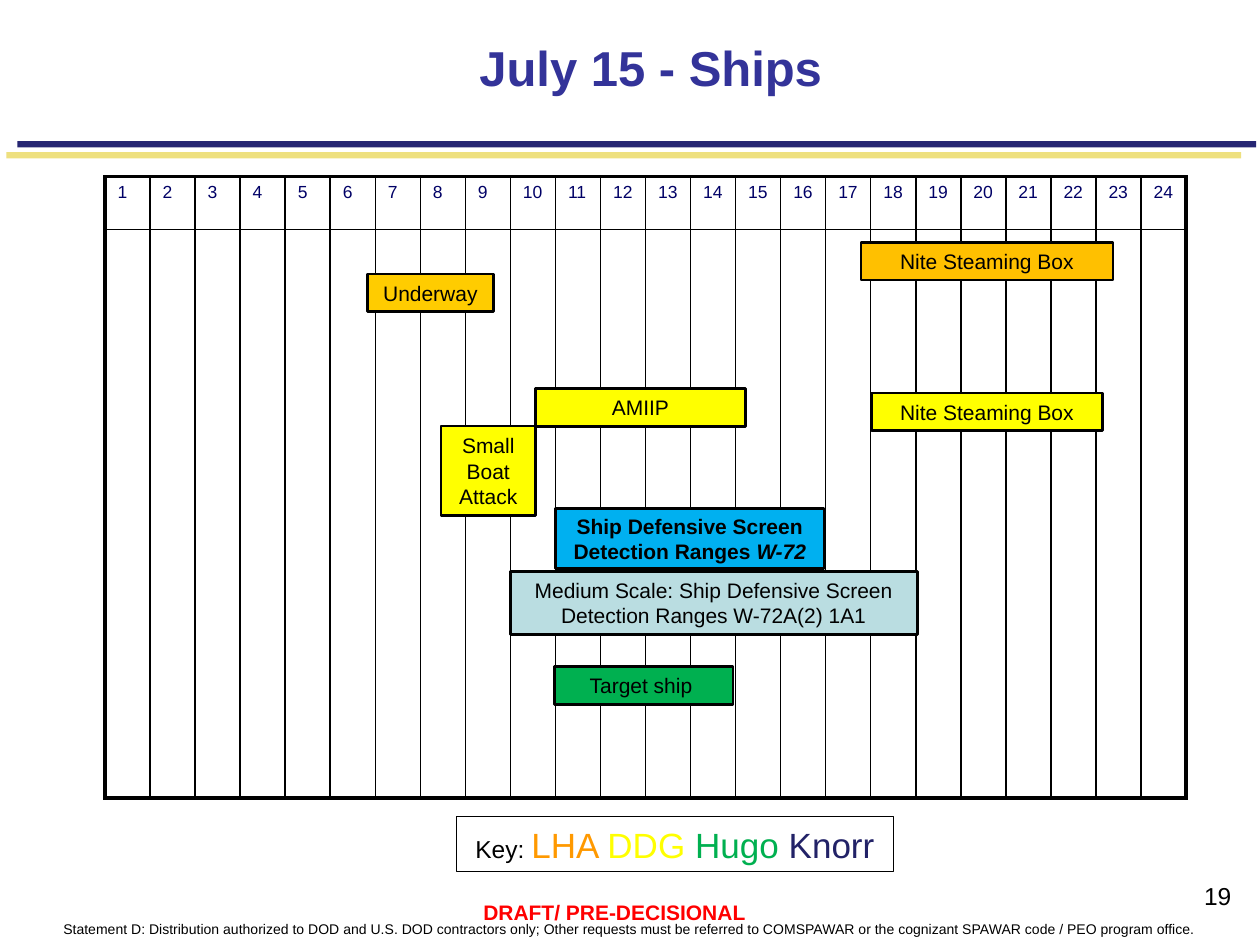
from lxml.etree import SubElement
from pptx import Presentation
from pptx.dml.color import RGBColor
from pptx.enum.shapes import MSO_SHAPE as Shape
from pptx.enum.text import MSO_ANCHOR as Anchor, PP_ALIGN as Align
from pptx.oxml.ns import qn
from pptx.util import Pt

BLACK = RGBColor(0, 0, 0)
WHITE = RGBColor(255, 255, 255)
RED = RGBColor(255, 0, 0)
TITLE_BLUE = RGBColor(0x33, 0x33, 0x99)
RULE_NAVY = RGBColor(0x26, 0x26, 0x73)
RULE_GOLD = RGBColor(0xEE, 0xE0, 0x7F)
HOUR_BLUE = RGBColor(0, 0, 0x66)
ORANGE = RGBColor(0xFF, 0x99, 0)
AMBER = RGBColor(0xFF, 0xC0, 0)
GOLD = RGBColor(0xFF, 0xCC, 0)
YELLOW = RGBColor(0xFF, 0xFF, 0)
GREEN = RGBColor(0, 0xB0, 0x50)
SKY = RGBColor(0, 0xB0, 0xF0)
PALE_TEAL = RGBColor(0xBA, 0xDD, 0xE1)
KNORR_NAVY = RGBColor(0x22, 0x22, 0x67)

HOURS = 24
THIN, THICK = 1, 2.25
STATEMENT = (
    "Statement D: Distribution authorized to DOD and U.S. DOD contractors only; "
    "Other requests must be referred to COMSPAWAR or the cognizant SPAWAR code / "
    "PEO program office."
)
KEY = [("LHA ", ORANGE), ("DDG", YELLOW), (" Hugo ", GREEN), ("Knorr", KNORR_NAVY)]
EVENTS = [
    ("Underway", GOLD, 150, 55.5, 72, 21.6),
    ("Small Boat Attack", YELLOW, 192, 142.5, 54, 51),
    ("Nite Steaming Box", AMBER, 432, 37.5, 144, 21.6),
    ("Nite Steaming Box", YELLOW, 438, 123.5, 132, 21.6),
    ("AMIIP", YELLOW, 246, 121, 120, 21.6),
    ("Target ship ", GREEN, 257, 280, 102, 21.6),
    ("Medium Scale: Ship Defensive Screen Detection Ranges W-72A(2) 1A1",
     PALE_TEAL, 231.6, 225.5, 232.6, 36),
]


def style_font(font, size, color=BLACK, bold=False):
    font.name = "Arial"
    font.size = Pt(size)
    font.color.rgb = color
    font.bold = bold


def add_label(page, text, box, size, color=BLACK, bold=False, wrap=True, anchor=Anchor.MIDDLE):
    frame = page.shapes.add_textbox(*map(Pt, box)).text_frame
    frame.word_wrap = wrap
    frame.vertical_anchor = anchor
    para = frame.paragraphs[0]
    para.text = text
    para.alignment = Align.CENTER
    style_font(para.font, size, color, bold)


def add_bar(page, box, fill, line_width=0):
    bar = page.shapes.add_shape(Shape.RECTANGLE, *map(Pt, box))
    bar.shadow.inherit = False
    bar.fill.solid()
    bar.fill.fore_color.rgb = fill
    if line_width:
        bar.line.color.rgb = BLACK
        bar.line.width = Pt(line_width)
    else:
        bar.line.fill.background()
    return bar


def add_event(page, text, fill, box):
    frame = add_bar(page, box, fill, 1.5).text_frame
    frame.word_wrap = True
    para = frame.paragraphs[0]
    para.text = text
    para.alignment = Align.CENTER
    style_font(para.font, 12)
    return para


def set_borders(cell, **widths):
    properties = cell._tc.get_or_add_tcPr()
    for side in "LRTB":
        line = SubElement(properties, qn(f"a:ln{side}"), w=str(Pt(widths[side])))
        fill = SubElement(line, qn("a:solidFill"))
        SubElement(fill, qn("a:srgbClr"), val=str(BLACK))


def add_hour_grid(page, box):
    left, top, width, height = box
    header = 30.24
    table = page.shapes.add_table(2, HOURS, *map(Pt, box)).table
    for row, row_height in zip(table.rows, (header, height - header)):
        row.height = Pt(row_height)
    for index, column in enumerate(table.columns):
        column.width = Pt(width / HOURS)
        for row in range(2):
            cell = table.cell(row, index)
            set_borders(
                cell,
                L=THICK if index == 0 else THIN,
                R=THICK if index == HOURS - 1 else THIN,
                T=THICK if row == 0 else THIN,
                B=THICK if row == 1 else THIN,
            )
            cell.fill.background()
        para = table.cell(0, index).text_frame.paragraphs[0]
        para.text = str(index + 1)
        style_font(para.font, 10, HOUR_BLUE)


def add_schedule(page, box):
    left, top, width, height = box
    add_hour_grid(page, box)
    for text, fill, x, y, event_width, event_height in EVENTS:
        add_event(page, text, fill, (left + x, top + y, event_width, event_height))
    para = add_event(page, "Ship Defensive Screen Detection Ranges ", SKY,
                     (left + 257.5, top + 189.4, 153.4, 34.6))
    para.font.bold = True
    span = para.add_run()
    span.text = "W-72"
    span.font.italic = True


def add_key(page, box):
    frame = add_bar(page, box, WHITE, 0.75).text_frame
    frame.word_wrap = False
    para = frame.paragraphs[0]
    para.alignment = Align.CENTER
    for text, color, size in [("Key: ", BLACK, 14)] + [(*ship, 20) for ship in KEY]:
        span = para.add_run()
        span.text = text
        style_font(span.font, size, color)


def add_header(page, box):
    left, top, width, height = box
    add_bar(page, (left + 3.6, top + 87, 705.6, 3.6), RULE_GOLD)
    add_bar(page, (left + 10, top + 80.6, 707.8, 3.6), RULE_NAVY)
    add_label(page, "July 15 - Ships", (left + 138.2, top + 18.5, 467.3, 39), 28,
              TITLE_BLUE, bold=True)


def add_footer(page, box):
    left, top, width, height = box
    add_label(page, STATEMENT, (left, top + 22.7, width, 16.6), 8)
    add_label(page, "19", (left + 671, top, 49.7, 36), 14, anchor=Anchor.TOP)
    add_label(page, "DRAFT/ PRE-DECISIONAL", (left + 268, top + 10.4, 166.3, 21.6), 12,
              RED, bold=True, wrap=False)


def main():
    deck = Presentation()
    deck.slide_width, deck.slide_height = Pt(720), Pt(540)
    page = deck.slides.add_slide(deck.slide_layouts[6])
    add_header(page, (0, 0, 720, 92))
    add_footer(page, (0, 500, 720, 40))
    add_schedule(page, (60, 101, 617.76, 355))
    add_key(page, (260.8, 466.6, 249.8, 31.5))
    deck.save("out.pptx")


if __name__ == "__main__":
    main()
